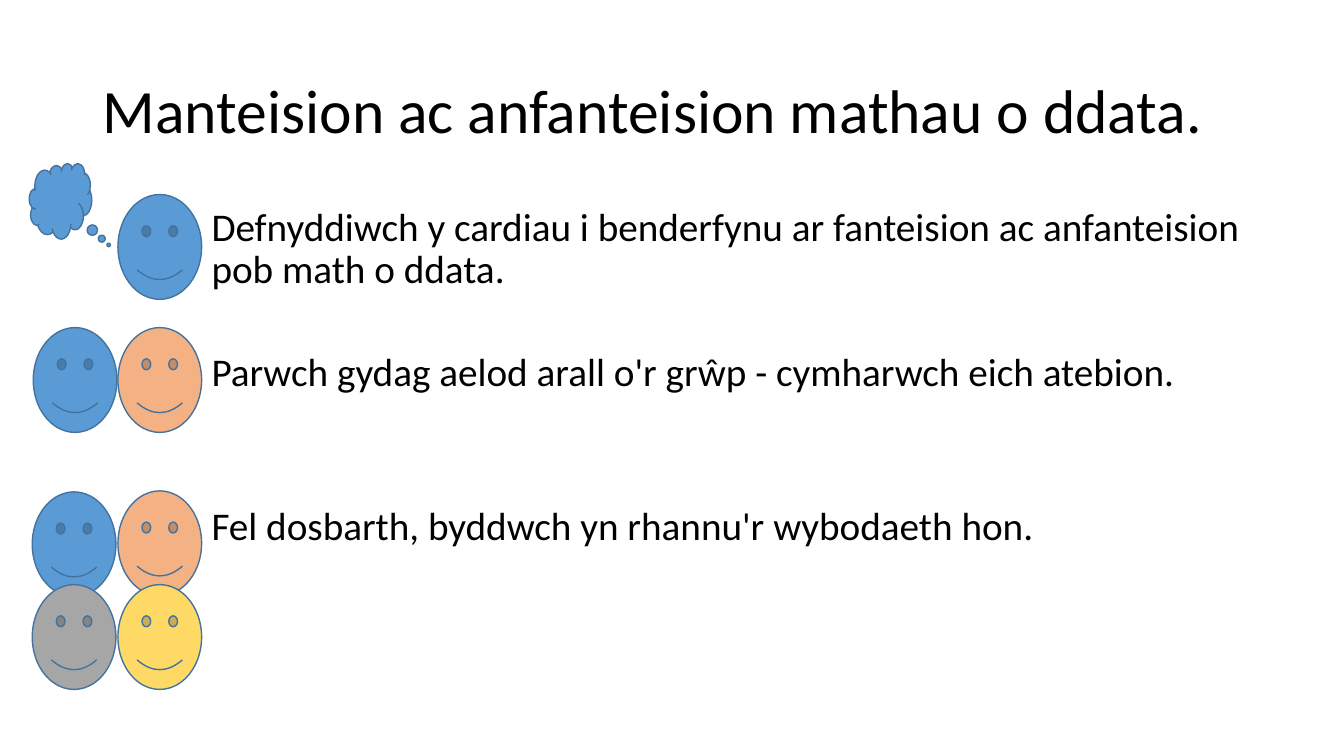
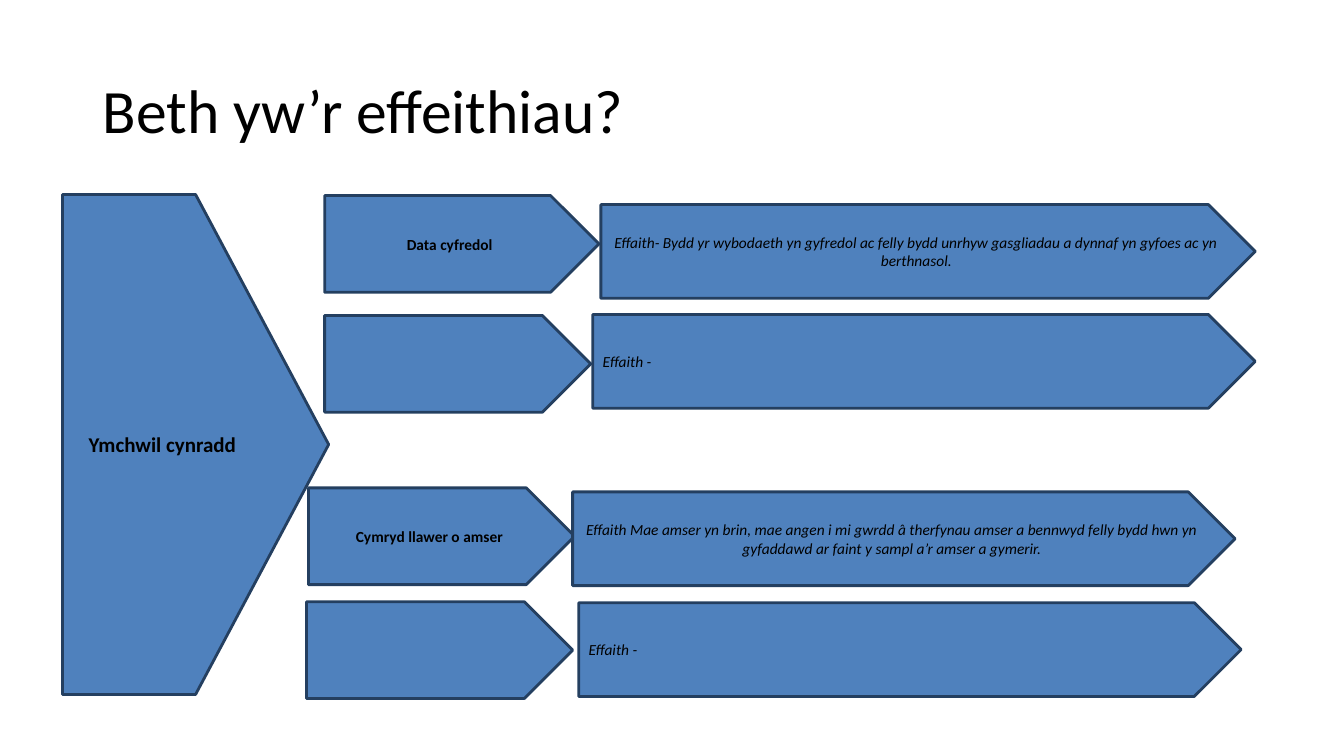
from pptx import Presentation
from pptx.dml.color import RGBColor
from pptx.enum.shapes import MSO_SHAPE as Shape
from pptx.enum.text import MSO_ANCHOR as Anchor, PP_ALIGN as Align
from pptx.util import Pt

PX = 9144
FONT = "Calibri"
BLACK = RGBColor(0x00, 0x00, 0x00)
SKY = RGBColor(0x5B, 0x9B, 0xD5)
SKY_EDGE = RGBColor(0x43, 0x73, 0x9E)
PEACH = RGBColor(0xF4, 0xB1, 0x83)
GOLD = RGBColor(0xFF, 0xD9, 0x66)
GREY = RGBColor(0xA6, 0xA6, 0xA6)
STEEL = RGBColor(0x4F, 0x81, 0xBD)
STEEL_EDGE = RGBColor(0x24, 0x3F, 0x60)

STEPS = [
    ("Defnyddiwch y cardiau i benderfynu ar fanteision ac anfanteision pob math o ddata.", 0),
    ("Parwch gydag aelod arall o'r grŵp - cymharwch eich atebion.", 43),
    ("Fel dosbarth, byddwch yn rhannu'r wybodaeth hon.", 80),
]
FACES = [
    (117, 193, SKY),
    (33, 325, SKY), (117, 325, PEACH),
    (32, 488, SKY), (117, 487, PEACH),
    (117, 580, GOLD), (32, 580, GREY),
]
CAUSES = [
    (322, 194, 272, "Data cyfredol"),
    (322, 313, 264, ""),
    (306, 484, 264, "Cymryd llawer o amser"),
    (304, 597, 264, ""),
]
EFFECTS = [
    (596, 203, 649, Align.CENTER,
     "Effaith- Bydd yr wybodaeth yn gyfredol ac felly bydd unrhyw gasgliadau a dynnaf "
     "yn gyfoes ac yn berthnasol."),
    (588, 312, 657, Align.LEFT, "Effaith -"),
    (568, 488, 657, Align.CENTER,
     "Effaith Mae amser yn brin, mae angen i mi gwrdd â therfynau amser a bennwyd felly "
     "bydd hwn yn gyfaddawd ar faint y sampl a’r amser a gymerir."),
    (574, 598, 657, Align.LEFT, "Effaith -"),
]


class Deck:
    """Holds the shared style and the slide being built."""

    def __init__(self):
        self.presentation = Presentation()
        self.presentation.slide_width = 1333 * PX
        self.presentation.slide_height = 750 * PX
        self.slide = None

    def add_slide(self, title):
        self.slide = self.presentation.slides.add_slide(self.presentation.slide_layouts[6])
        self.text(92, 40, 1150, 145, [(title, 0)], 44, Anchor.MIDDLE)

    def format(self, paragraph, size, bold=False, italic=False):
        for run in paragraph.runs:
            font = run.font
            font.name, font.size = FONT, Pt(size)
            font.bold, font.italic = bold, italic
            font.color.rgb = BLACK

    def text(self, left, top, width, height, lines, size, anchor=Anchor.TOP):
        box = self.slide.shapes.add_textbox(left * PX, top * PX, width * PX, height * PX)
        frame = box.text_frame
        frame.word_wrap = True
        frame.vertical_anchor = anchor
        frame.text = "\n".join(line for line, gap in lines)
        for paragraph, (line, gap) in zip(frame.paragraphs, lines):
            paragraph.line_spacing = 0.9
            paragraph.space_before = Pt(gap)
            self.format(paragraph, size)

    def shape(self, kind, left, top, width, height, fill, edge, weight):
        shape = self.slide.shapes.add_shape(kind, left * PX, top * PX, width * PX, height * PX)
        shape.shadow.inherit = False
        shape.fill.solid()
        shape.fill.fore_color.rgb = fill
        shape.line.color.rgb = edge
        shape.line.width = Pt(weight)
        return shape

    def face(self, left, top, fill):
        self.shape(Shape.SMILEY_FACE, left, top, 83, 104, fill, SKY_EDGE, 1)

    def thought(self, left, top, width, height):
        cloud = self.shape(Shape.CLOUD_CALLOUT, left, top, width, height, SKY, SKY_EDGE, 1)
        cloud.adjustments[0], cloud.adjustments[1] = 0.77, 0.58

    def arrow(self, left, top, width, height, text, size=11, align=Align.CENTER, italic=False):
        arrow = self.shape(Shape.PENTAGON, left, top, width, height, STEEL, STEEL_EDGE, 2)
        if text:
            frame = arrow.text_frame
            frame.word_wrap = True
            frame.vertical_anchor = Anchor.MIDDLE
            frame.text = text
            paragraph = frame.paragraphs[0]
            paragraph.alignment = align
            self.format(paragraph, size, bold=not italic, italic=italic)


def main():
    deck = Deck()

    deck.add_slide("Manteision ac anfanteision mathau o ddata.")
    deck.text(200, 201, 1054, 476, STEPS, 28)
    deck.thought(29, 162, 62, 75)
    for left, top, fill in FACES:
        deck.face(left, top, fill)

    deck.add_slide("Beth yw’r effeithiau?")
    deck.arrow(62, 193, 264, 496, "Ymchwil cynradd", size=15)
    for left, top, width, text in CAUSES:
        deck.arrow(left, top, width, 96, text)
    for left, top, width, align, text in EFFECTS:
        deck.arrow(left, top, width, 93, text, align=align, italic=True)

    deck.presentation.save("out.pptx")


if __name__ == "__main__":
    main()
